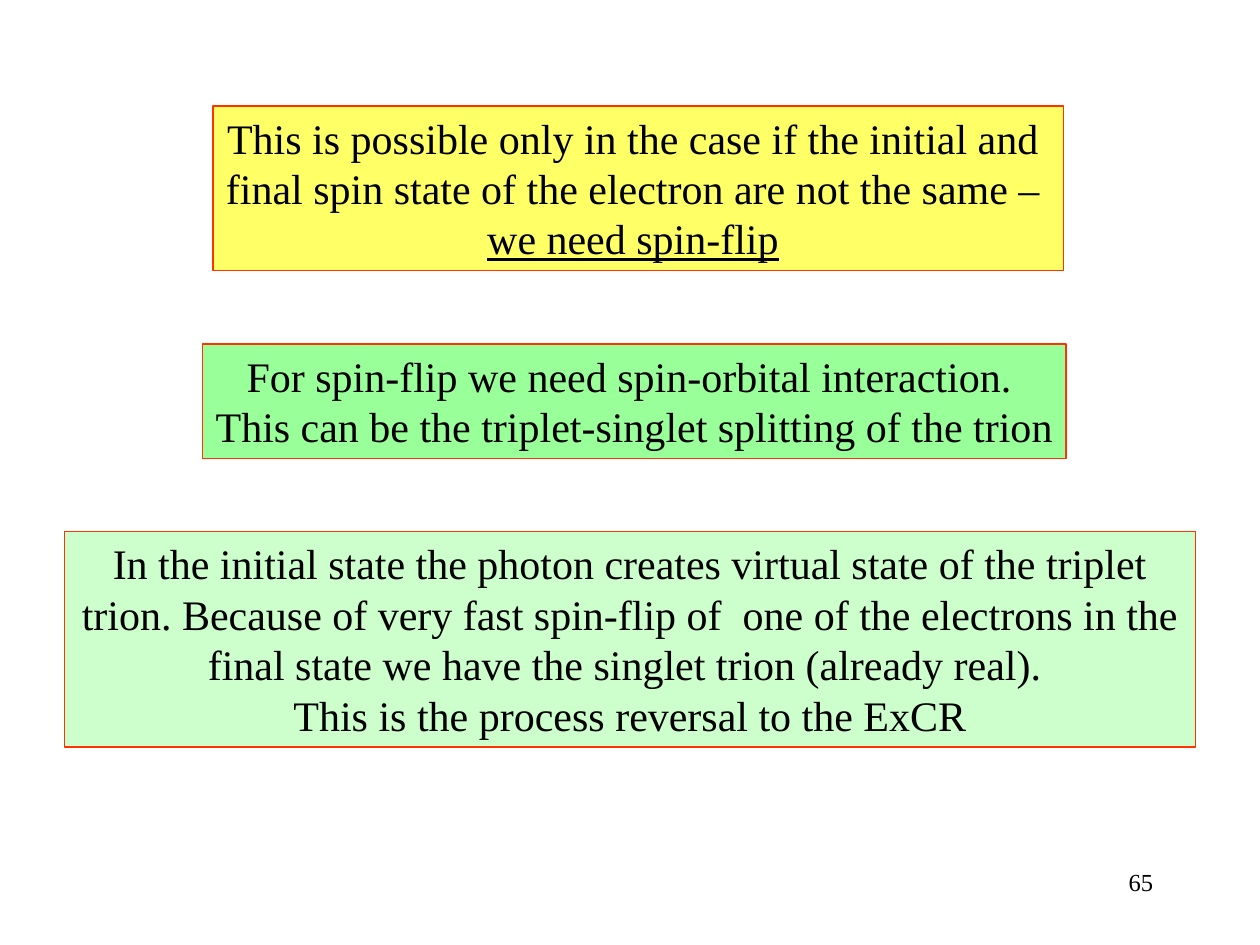
import pptx
import pptx.dml.color
import pptx.enum.shapes
import pptx.enum.text
import pptx.util
from pptx.util import Inches

THEME = {
    "font": "Times New Roman",
    "text": "000000",
    "border": "FF3300",
    "yellow": "FFFF66",
    "green": "99FF99",
    "pale_green": "CCFFCC",
    "statement_size": 24,
    "number_size": 14,
    "border_width": 0.75,
}
ALIGN = pptx.enum.text.PP_ALIGN


def rgb(key):
    return pptx.dml.color.RGBColor.from_string(THEME[key])


def write_line(paragraph, runs, size_key, alignment):
    """Fill a paragraph with (text, underlined) runs."""
    paragraph.alignment = alignment
    for text, underlined in runs:
        run = paragraph.add_run()
        run.text = text
        run.font.color.rgb = rgb("text")
        font_format = {
            "name": THEME["font"],
            "size": pptx.util.Pt(THEME[size_key]),
            "underline": underlined,
        }
        for attribute, value in font_format.items():
            setattr(run.font, attribute, value)


presentation = pptx.Presentation()
presentation.slide_width = Inches(10)
presentation.slide_height = Inches(7.5)
slide = presentation.slides.add_slide(presentation.slide_layouts[6])

# Statements: position, fill, wrapping, lines of (text, underlined) runs
statements = [
    ((1.69, 0.84, 6.75, 1.31), "yellow", False, [
        [("This is possible only in the case if the initial and ", False)],
        [("final spin state of the electron are not the same – ", False)],
        [("we need spin-flip", True), (" ", False)],
    ]),
    ((1.61, 2.73, 6.85, 0.91), "green", False, [
        [("For spin-flip we need spin-orbital interaction. ", False)],
        [("This can be the triplet-singlet splitting of the trion", False)],
    ]),
    ((0.51, 4.22, 8.98, 1.71), "pale_green", True, [
        [("In the initial state the photon creates virtual state of the "
          "triplet trion. Because of very fast spin-flip of  one of the "
          "electrons in the final state we have the singlet trion "
          "(already real). ", False)],
        [("This is the process reversal to the ExCR", False)],
    ]),
]

for position, fill, wraps, lines in statements:
    statement = slide.shapes.add_shape(
        pptx.enum.shapes.MSO_SHAPE.RECTANGLE, *map(Inches, position))
    statement.shadow.inherit = False
    statement.fill.solid()
    statement.fill.fore_color.rgb = rgb(fill)
    statement.line.color.rgb = rgb("border")
    statement.line.width = pptx.util.Pt(THEME["border_width"])
    frame = statement.text_frame
    frame_format = {
        "word_wrap": wraps,
        "auto_size": pptx.enum.text.MSO_AUTO_SIZE.SHAPE_TO_FIT_TEXT,
        "vertical_anchor": pptx.enum.text.MSO_ANCHOR.TOP,
    }
    for attribute, value in frame_format.items():
        setattr(frame, attribute, value)
    for index, runs in enumerate(lines):
        paragraph = frame.add_paragraph() if index else frame.paragraphs[0]
        write_line(paragraph, runs, "statement_size", ALIGN.CENTER)

# Page number
page_number = slide.shapes.add_textbox(
    Inches(7.17), Inches(6.83), Inches(2.08), Inches(0.5))
page_number.text_frame.word_wrap = True
write_line(page_number.text_frame.paragraphs[0], [("65", False)],
           "number_size", ALIGN.RIGHT)

presentation.save("out.pptx")
